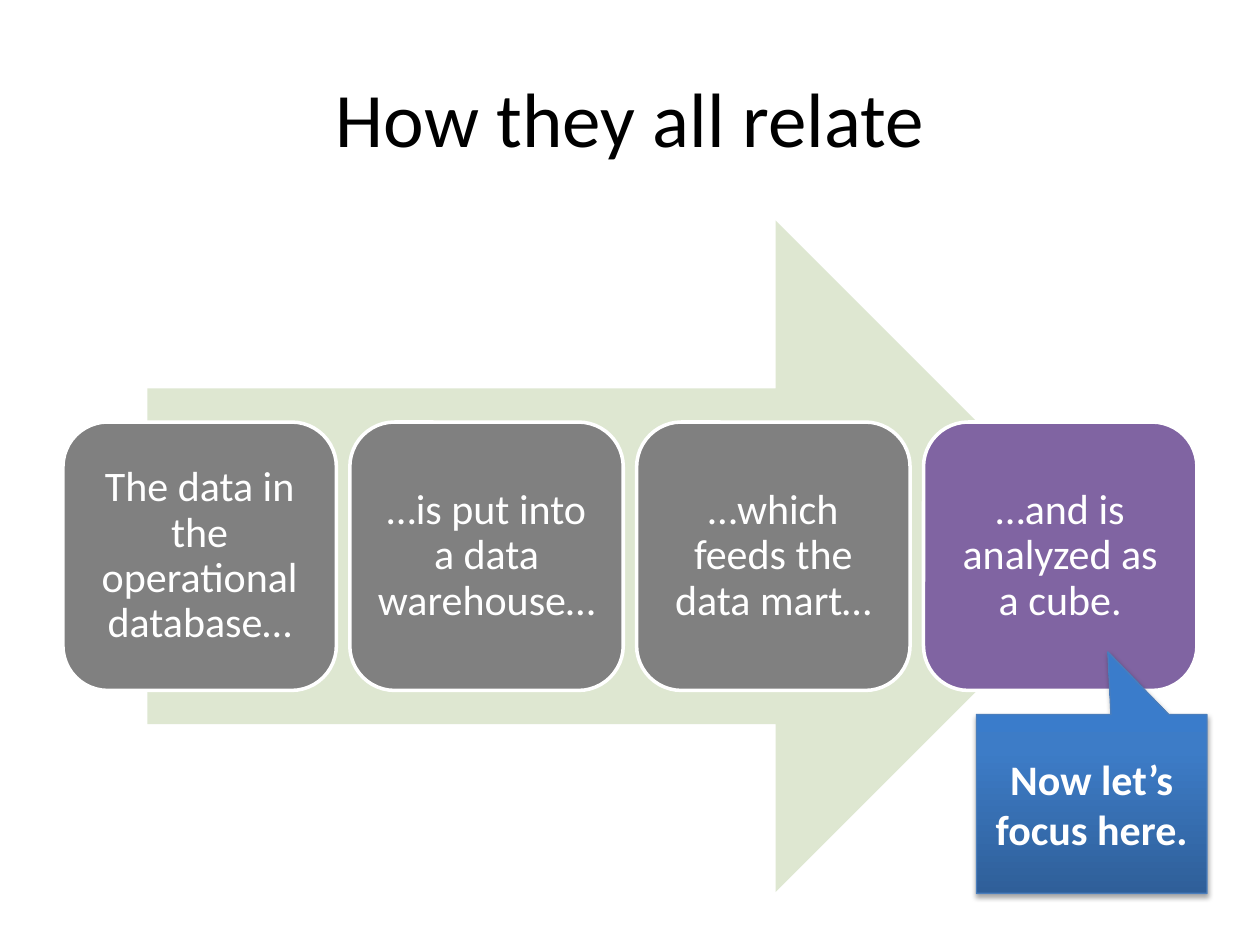
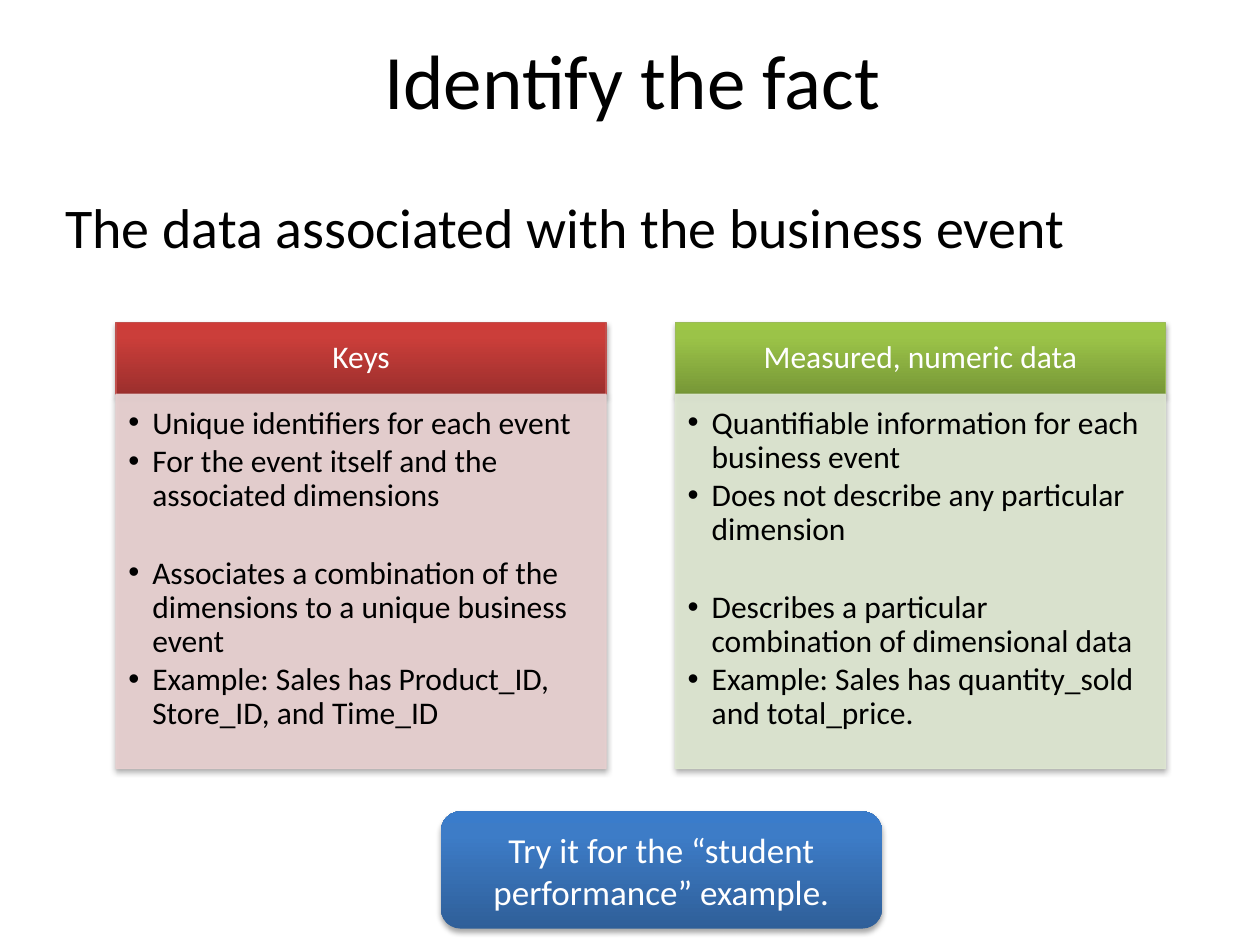
import copy

import pptx
import pptx.dml.color
import pptx.enum.shapes
import pptx.enum.text
import pptx.oxml
import pptx.oxml.ns
import pptx.util

SHAPE = pptx.enum.shapes.MSO_SHAPE
ALIGN = pptx.enum.text.PP_ALIGN
ANCHOR = pptx.enum.text.MSO_ANCHOR
Inches, Pt = pptx.util.Inches, pptx.util.Pt
qn = pptx.oxml.ns.qn

COLUMNS, ROWS = 100, 75
BLACK, WHITE, GREY, PURPLE = "000000", "FFFFFF", "808080", "8064A2"
PALE_GREEN, PALE_RED = "DEE7D1", "E8D0D0"
BLUE_SHADES = ("2F5F99", "3D7CC7", "3A7CCB")
RED_SHADES = ("9C2F2D", "CB3E3A", "CE3B37")
GREEN_SHADES = ("779737", "9BC348", "9DC746")


def color(value):
    return pptx.dml.color.RGBColor.from_string(value)


def element(tag, **attributes):
    node = pptx.oxml.parse_xml(
        f'<a:{tag} xmlns:a="http://schemas.openxmlformats.org/drawingml/2006/main"/>')
    for name, value in attributes.items():
        node.set(name, str(value))
    return node


class Canvas:
    """Holds the shared style and the slide being drawn, on a grid of 100 by 75."""

    font = "Calibri"
    default_inset = (0.1, 0.05, 0.1, 0.05)

    def __init__(self):
        self.deck = pptx.Presentation()
        self.deck.slide_width, self.deck.slide_height = Inches(10), Inches(7.5)
        self.page = None

    def new_page(self, title, left, top):
        self.page = self.deck.slides.add_slide(self.deck.slide_layouts[6])
        self.text((left, top, 90, 12.5), title, 44, align=ALIGN.CENTER, anchor=ANCHOR.MIDDLE)

    def frame(self, area):
        """Turn (column, row, columns, rows) into slide lengths."""
        column = self.deck.slide_width / COLUMNS
        row = self.deck.slide_height / ROWS
        left, top, width, height = area
        return (round(left * column), round(top * row),
                round(width * column), round(height * row))

    def set_text(self, box, lines, size, ink=BLACK, bold=False, align=ALIGN.LEFT,
                 anchor=ANCHOR.TOP, inset=default_inset, spacing=1.0):
        frame = box.text_frame
        frame.word_wrap = True
        frame.vertical_anchor = anchor
        (frame.margin_left, frame.margin_top,
         frame.margin_right, frame.margin_bottom) = map(Inches, inset)
        frame.text = lines
        for para in frame.paragraphs:
            para.alignment = align
            para.line_spacing = spacing
            for span in para.runs:
                span.font.name = self.font
                span.font.size = Pt(size)
                span.font.bold = bold
                span.font.color.rgb = color(ink)

    def text(self, area, lines, size, **style):
        box = self.page.shapes.add_textbox(*self.frame(area))
        self.set_text(box, lines, size, **style)

    def shape(self, kind, area, fill, line=None, line_width=0.75, opacity=100, shadow=False):
        """Draw a preset shape; a tuple of three fills makes an upward gradient."""
        box = self.page.shapes.add_shape(kind, *self.frame(area))
        if isinstance(fill, tuple):
            self.shade(box, fill)
        else:
            box.fill.solid()
            box.fill.fore_color.rgb = color(fill)
        if line:
            box.line.color.rgb = color(line)
            box.line.width = Pt(line_width)
        else:
            box.line.fill.background()
        if opacity < 100:
            for paint in box._element.spPr.iter(qn("a:srgbClr")):
                paint.append(element("alpha", val=opacity * 1000))
        box.shadow.inherit = False
        if shadow:
            self.drop_shadow(box)
        return box

    def shade(self, box, shades):
        box.fill.gradient()
        box.fill.gradient_angle = 90
        stops = box._element.spPr.find(".//" + qn("a:gsLst"))
        stops.append(copy.deepcopy(stops[-1]))
        for stop, shade, position in zip(box.fill.gradient_stops, shades, (0, 0.8, 1)):
            stop.color.rgb = color(shade)
            stop.position = position

    def drop_shadow(self, box):
        shadow = element("outerShdw", blurRad=Pt(3.1), dist=Pt(1.8),
                         dir=90 * 60000, rotWithShape=0)
        tint = element("srgbClr", val=BLACK)
        tint.append(element("alpha", val=35000))
        shadow.append(tint)
        box._element.spPr.find(qn("a:effectLst")).append(shadow)

    def label(self, kind, area, fill, words, size, bold=False, inset=default_inset,
              spacing=1.0, **look):
        box = self.shape(kind, area, fill, **look)
        self.set_text(box, words, size, WHITE, bold, ALIGN.CENTER, ANCHOR.MIDDLE, inset, spacing)
        return box

    def bullets(self, box, groups, size):
        """Fill a box with groups of bullets, one line's gap between groups."""
        self.set_text(box, "\n".join("\n".join(group) for group in groups), size,
                      inset=(0.1, 0.1, 0.14, 0.16), spacing=0.9)
        paragraphs = iter(box.text_frame.paragraphs)
        for number, group in enumerate(groups):
            for index in range(len(group)):
                para = next(paragraphs)
                para.space_after = Pt(0.15 * size)
                if number and not index:
                    para.space_before = Pt(22)
                properties = para._p.get_or_add_pPr()
                properties.set("marL", str(Inches(0.19)))
                properties.set("indent", str(-Inches(0.19)))
                properties.append(element("buFont", typeface="Arial"))
                properties.append(element("buChar", char="•"))

    def panel(self, left, heading, shades, edge, pale, groups):
        top, width, heading_height, body_height = 25.6, 38.9, 5.7, 29.7
        self.label(SHAPE.RECTANGLE, (left, top, width, heading_height), shades, heading, 18,
                   inset=(0.14, 0.08, 0.14, 0.08), spacing=0.9, line=edge, shadow=True)
        body = self.shape(SHAPE.RECTANGLE, (left, top + heading_height, width, body_height),
                          pale, line=pale, opacity=90, shadow=True)
        self.bullets(body, groups, 18)


def draw_relation(canvas):
    canvas.new_page("How they all relate", 5, 3)
    canvas.shape(SHAPE.RIGHT_ARROW, (11.7, 17.5, 76.5, 53.3), PALE_GREEN)
    steps = [
        ("The data in the operational database…", GREY),
        ("…is put into a data warehouse…", GREY),
        ("…which feeds the data mart…", GREY),
        ("…and is analyzed as a cube.", PURPLE),
    ]
    left, width, span = 5, 21.7, 90
    pitch = (span - width) / (len(steps) - 1)
    for index, (words, fill) in enumerate(steps):
        canvas.label(SHAPE.ROUNDED_RECTANGLE, (left + index * pitch, 33.5, width, 21.3),
                     fill, words, 24, inset=(0.1,) * 4, spacing=0.9,
                     line=WHITE, line_width=2)
    callout = canvas.label(SHAPE.RECTANGULAR_CALLOUT, (77.5, 56.7, 18.3, 14.2), BLUE_SHADES,
                           "Now let’s focus here.", 24, bold=True, line="4B7EBC", shadow=True)
    callout.adjustments[0], callout.adjustments[1] = 0.07, -0.85


def draw_fact(canvas):
    canvas.new_page("Identify the fact", 5.2, 0)
    canvas.text((4.2, 14.8, 90, 49.5), "The data associated with the business event", 32)
    canvas.panel(9.2, "Keys", RED_SHADES, "C0504D", PALE_RED, [
        ["Unique identifiers for each event",
         "For the event itself and the associated dimensions"],
        ["Associates a combination of the dimensions to a unique business event",
         "Example: Sales has Product_ID, Store_ID, and Time_ID"],
    ])
    canvas.panel(53.6, "Measured, numeric data", GREEN_SHADES, "9BBB59", PALE_GREEN, [
        ["Quantifiable information for each business event",
         "Does not describe any particular dimension"],
        ["Describes a particular combination of dimensional data",
         "Example: Sales has quantity_sold and total_price."],
    ])
    canvas.label(SHAPE.ROUNDED_RECTANGLE, (35, 64.4, 35, 9.3), BLUE_SHADES,
                 "Try it for the “student performance” example.", 20, shadow=True)


def main():
    canvas = Canvas()
    draw_relation(canvas)
    draw_fact(canvas)
    canvas.deck.save("out.pptx")


if __name__ == "__main__":
    main()
